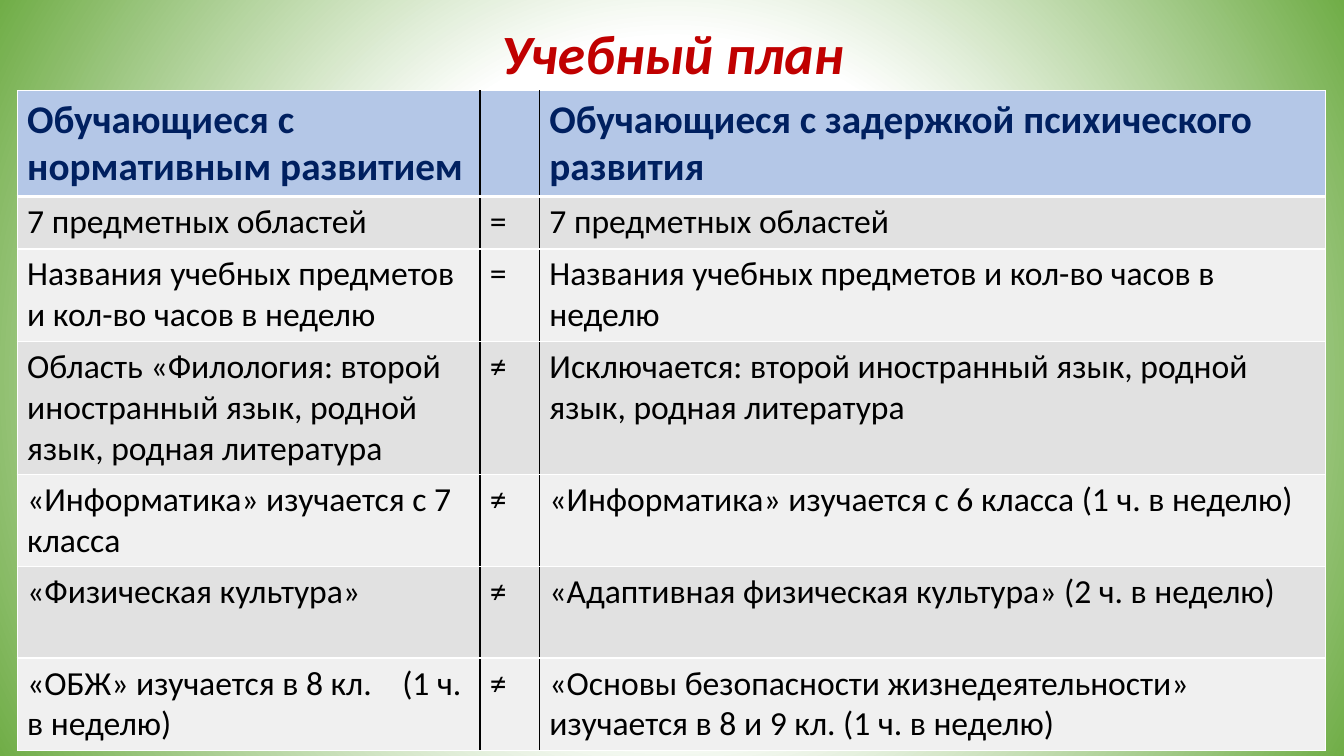
from dataclasses import dataclass

from lxml.etree import SubElement
from pptx import Presentation
from pptx.dml.color import RGBColor
from pptx.enum.text import MSO_ANCHOR, MSO_AUTO_SIZE, PP_ALIGN
from pptx.oxml import parse_xml
from pptx.oxml.ns import nsdecls, qn
from pptx.util import Inches, Pt

TITLE = "Учебный план"
HEADER = ("Обучающиеся с нормативным развитием", "",
          "Обучающиеся с задержкой психического развития")
COMPARISONS = [
    ("7 предметных областей", "=", "7 предметных областей"),
    ("Названия учебных предметов и кол-во часов в неделю", "=",
     "Названия учебных предметов и кол-во часов в неделю"),
    ("Область «Филология: второй иностранный язык, родной язык, родная литература", "≠",
     "Исключается: второй иностранный язык, родной язык, родная литература"),
    ("«Информатика» изучается с 7 класса", "≠",
     "«Информатика» изучается с 6 класса (1 ч. в неделю)"),
    ("«Физическая культура»", "≠", "«Адаптивная физическая культура» (2 ч. в неделю)"),
    ("«ОБЖ» изучается в 8 кл.\t(1 ч. в неделю)", "≠",
     "«Основы безопасности жизнедеятельности» изучается в 8 и 9 кл. (1 ч. в неделю)"),
]
COLUMN_WIDTHS = (4.59, 0.59, 7.8)
ROW_HEIGHTS = (1.05, 0.52, 0.91, 1.32, 0.91, 0.91, 0.91)
TAB_STOP = 3.72


@dataclass(frozen=True)
class Theme:
    font: str = "Calibri"
    title_size: float = 39.6
    header_size: int = 28
    body_size: int = 24
    title: str = "C00000"
    header: str = "002060"
    body: str = "000000"
    header_fill: str = "B4C7E7"
    band_fills: tuple = ("E1E1E1", "F0F0F0")
    light_line: str = "FFFFFF"
    dark_line: str = "000000"
    glow: str = "FFFFFF"
    edge: str = "70AD47"


THEME = Theme()


def set_font(paragraph, size, color, bold=False, italic=False):
    font = paragraph.font
    font.name, font.size, font.bold, font.italic = THEME.font, Pt(size), bold, italic
    font.color.rgb = RGBColor.from_string(color)


def set_background(slide):
    """Circular gradient from a light centre to green corners."""
    slide.element.cSld.insert(0, parse_xml(
        f'<p:bg {nsdecls("p", "a")}><p:bgPr><a:gradFill rotWithShape="1"><a:gsLst>'
        f'<a:gs pos="0"><a:srgbClr val="{THEME.glow}"/></a:gs>'
        f'<a:gs pos="44000"><a:srgbClr val="{THEME.glow}"><a:alpha val="44000"/></a:srgbClr></a:gs>'
        f'<a:gs pos="100000"><a:srgbClr val="{THEME.edge}"/></a:gs></a:gsLst>'
        '<a:path path="circle"><a:fillToRect l="50000" t="50000" r="50000" b="50000"/></a:path>'
        '</a:gradFill><a:effectLst/></p:bgPr></p:bg>'))


def add_title(slide):
    title = slide.shapes.title
    title.left, title.top = Inches(0.92), Inches(0.38)
    title.width, title.height = Inches(11.5), Inches(0.37)
    frame = title.text_frame
    frame.text = TITLE
    frame.auto_size = MSO_AUTO_SIZE.NONE
    frame.vertical_anchor = MSO_ANCHOR.MIDDLE
    paragraph = frame.paragraphs[0]
    paragraph.alignment = PP_ALIGN.CENTER
    paragraph.line_spacing = 0.9
    set_font(paragraph, THEME.title_size, THEME.title, bold=True, italic=True)


def set_borders(cell, row, column):
    """White grid, black inner verticals and a thick rule under the header."""
    light, dark = THEME.light_line, THEME.dark_line
    borders = {
        "a:lnL": (dark if column else light, 1),
        "a:lnR": (dark if column < len(COLUMN_WIDTHS) - 1 else light, 1),
        "a:lnT": (light, 3 if row == 1 else 1),
        "a:lnB": (light, 1 if row else 3),
    }
    properties = cell._tc.get_or_add_tcPr()
    for position, (tag, (color, width)) in enumerate(borders.items()):
        properties.insert(position, parse_xml(
            f'<{tag} {nsdecls("a")} w="{Pt(width)}"><a:solidFill>'
            f'<a:srgbClr val="{color}"/></a:solidFill></{tag}>'))


def fill_cell(cell, text, row, column):
    cell.text = text
    paragraph = cell.text_frame.paragraphs[0]
    if row:
        fill = THEME.band_fills[(row - 1) % 2]
        set_font(paragraph, THEME.body_size, THEME.body)
    else:
        fill = THEME.header_fill
        set_font(paragraph, THEME.header_size, THEME.header, bold=True)
    if "\t" in text:
        stops = parse_xml(f'<a:tabLst {nsdecls("a")}/>')
        SubElement(stops, qn("a:tab"), pos=str(Inches(TAB_STOP)), algn="l")
        paragraph._p.get_or_add_pPr().insert(0, stops)
    cell.fill.solid()
    cell.fill.fore_color.rgb = RGBColor.from_string(fill)
    set_borders(cell, row, column)


def add_comparison_table(slide):
    rows = [HEADER, *COMPARISONS]
    table = slide.shapes.add_table(
        len(rows), len(COLUMN_WIDTHS), Inches(0.17), Inches(0.9),
        Inches(sum(COLUMN_WIDTHS)), Inches(sum(ROW_HEIGHTS))).table
    for column, width in zip(table.columns, COLUMN_WIDTHS):
        column.width = Inches(width)
    for row, height in zip(table.rows, ROW_HEIGHTS):
        row.height = Inches(height)
    for row, texts in enumerate(rows):
        for column, text in enumerate(texts):
            fill_cell(table.cell(row, column), text, row, column)


def main():
    presentation = Presentation()
    presentation.slide_width, presentation.slide_height = Inches(13.33), Inches(7.5)
    slide = presentation.slides.add_slide(presentation.slide_layouts[5])
    set_background(slide)
    add_title(slide)
    add_comparison_table(slide)
    presentation.save("out.pptx")


if __name__ == "__main__":
    main()
